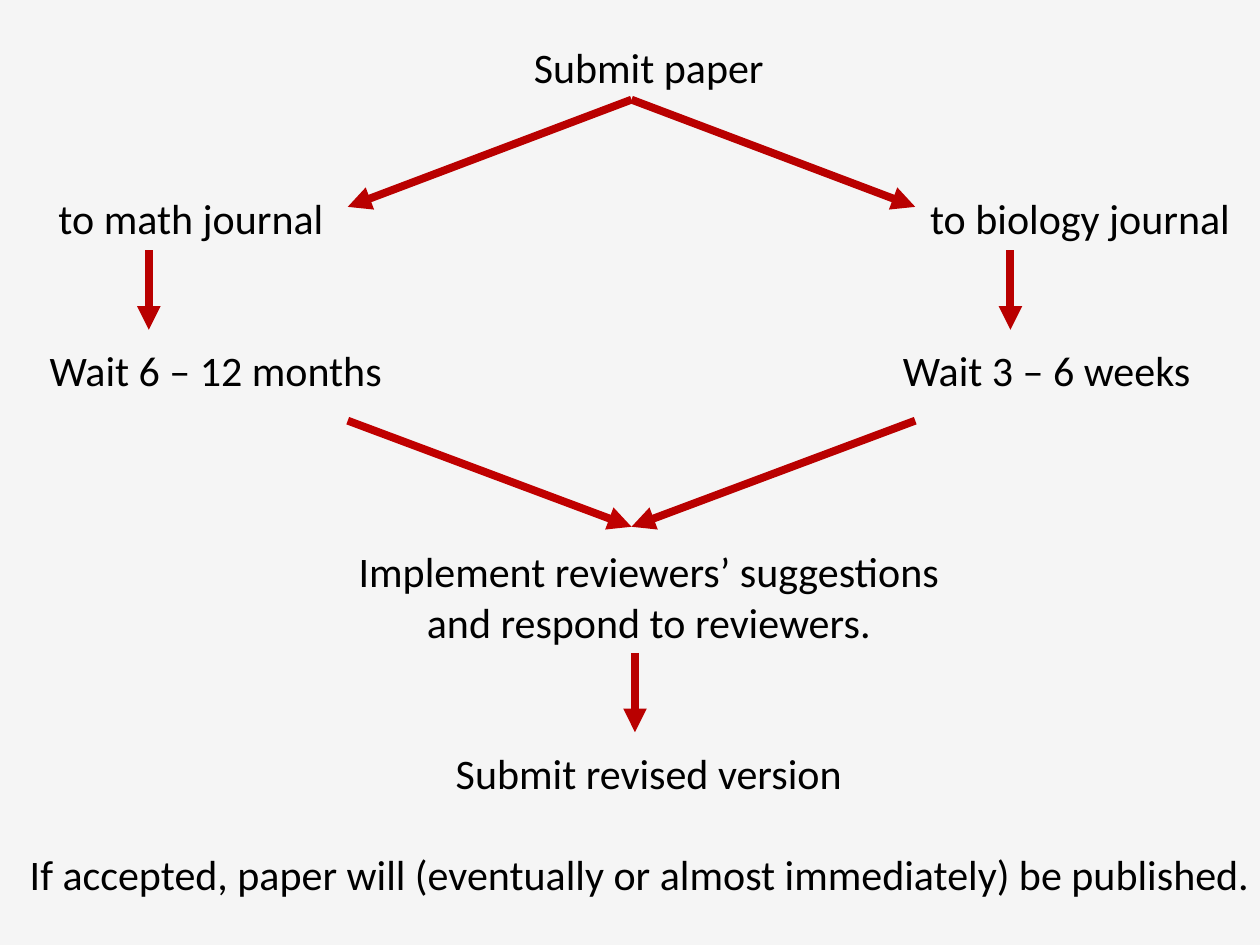
from pptx import Presentation
from pptx.dml.color import RGBColor
from pptx.enum.shapes import MSO_CONNECTOR as Link
from pptx.enum.text import MSO_ANCHOR as Anchor, PP_ALIGN as Align
from pptx.oxml.ns import qn
from pptx.util import Cm, Pt
from lxml.etree import SubElement

ROW = 1.016  # height of one text line, cm
RED = "B90000"


def color(code):
    return RGBColor.from_string(code)


def label(slide, x, y, wide, lines, align=Align.LEFT):
    """Place lines of text with the box's corner at x, y."""
    box = slide.shapes.add_textbox(Cm(x), Cm(y), Cm(wide), Cm(ROW * len(lines)))
    frame = box.text_frame
    frame.word_wrap = True
    frame.vertical_anchor = Anchor.TOP
    frame.margin_left = frame.margin_right = 0
    frame.margin_top = frame.margin_bottom = 0
    frame.text = "\n".join(lines)
    for para in frame.paragraphs:
        para.alignment = align
        for run in para.runs:
            run.font.name = "Calibri"
            run.font.size = Pt(24)
            run.font.color.rgb = color("000000")


def arrow(slide, x1, y1, x2, y2, code=RED):
    link = slide.shapes.add_connector(
        Link.STRAIGHT, Cm(x1), Cm(y1), Cm(x2), Cm(y2))
    link.line.color.rgb = color(code)
    link.line.width = Pt(4.5)
    SubElement(link.line._get_or_add_ln(), qn("a:tailEnd"), type="triangle")
    SubElement(link._element.spPr, qn("a:effectLst"))


def start(slide, x, y, wide):
    """Show the first step and its two ways out."""
    label(slide, x, y, wide, ["Submit paper"], Align.CENTER)
    mid = x + wide / 2 - 0.35
    for side in (-1, 1):
        arrow(slide, mid, y + 1.17, mid + side * 5.72, y + 3.33)


def branch(slide, x, y, wide, steps, shifts, stem):
    """Stack two steps, each with its indent, joined by an arrow at stem."""
    for i, (step, shift) in enumerate(zip(steps, shifts)):
        label(slide, x + shift, y + 3 * ROW * i, wide - shift, [step])
    arrow(slide, x + stem, y + 1.16, x + stem, y + 2.76)


def finish(slide, x, y, wide):
    """Join both branches and show the last steps."""
    mid = x + wide / 2 - 0.35
    for side, code in ((-1, "C00000"), (1, RED)):
        arrow(slide, mid + side * 5.72, y - 2.52, mid, y - 0.38, code)
    label(slide, x, y, wide,
          ["Implement reviewers’ suggestions", "and respond to reviewers."],
          Align.CENTER)
    arrow(slide, mid + 0.07, y + 2.16, mid + 0.07, y + 3.76)
    label(slide, x, y + 4 * ROW, wide, ["Submit revised version"], Align.CENTER)


def main():
    deck = Presentation()
    deck.slide_width, deck.slide_height = Cm(25.4), Cm(19.05)
    slide = deck.slides.add_slide(deck.slide_layouts[6])
    fill = slide.background.fill
    fill.solid()
    fill.fore_color.rgb = color("F5F5F5")

    top = 0.84
    start(slide, 5.08, top, 16)
    branch(slide, 1, top + 3 * ROW, 8,
           ["to math journal", "Wait 6 – 12 months"], (0.18, 0), 2)
    branch(slide, 18.2, top + 3 * ROW, 7,
           ["to biology journal", "Wait 3 – 6 weeks"], (0.55, 0), 2.17)
    finish(slide, 5.08, top + 10 * ROW, 16)
    label(slide, 0.6, top + 16 * ROW, 24.8,
          ["If accepted, paper will (eventually or almost immediately)"
           " be published."])
    deck.save("out.pptx")


if __name__ == "__main__":
    main()
